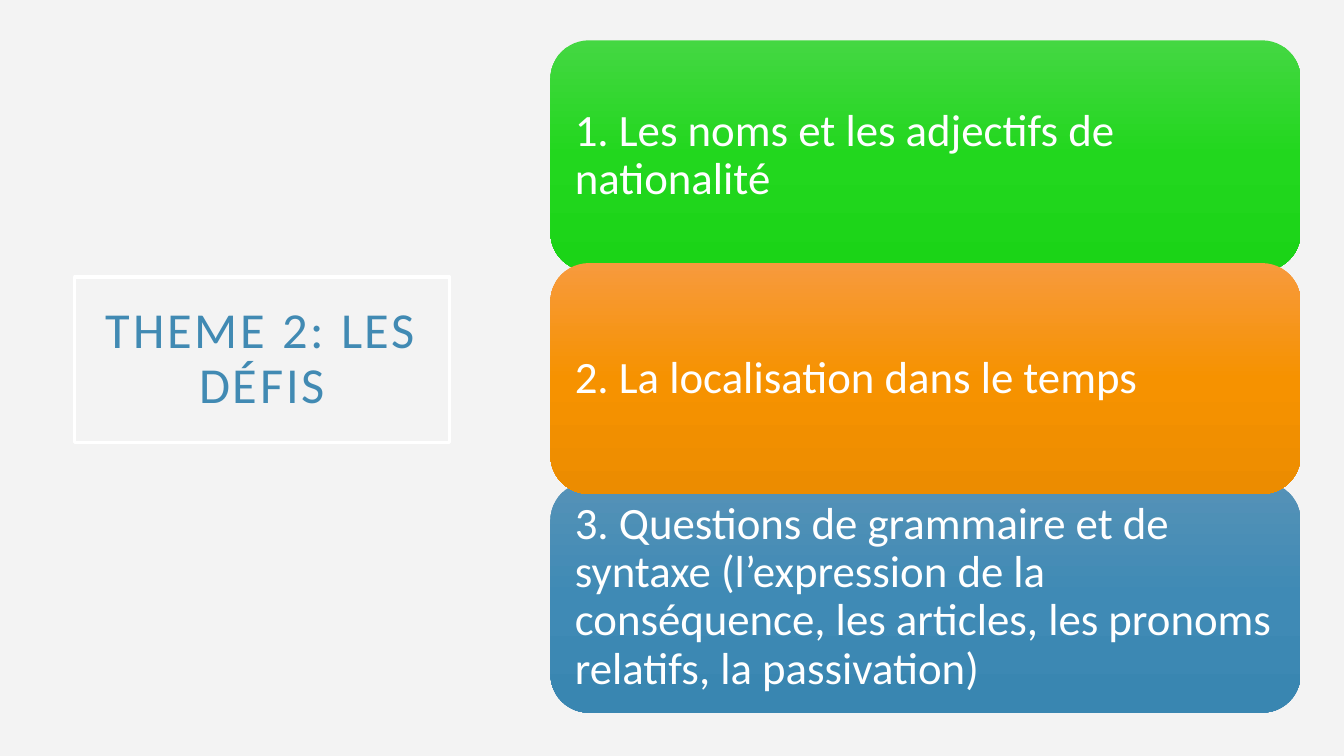
import copy

import pptx
import pptx.dml.color
import pptx.enum.shapes
import pptx.enum.text
import pptx.oxml.ns
import pptx.util

Inches = pptx.util.Inches
Pt = pptx.util.Pt
RGBColor = pptx.dml.color.RGBColor
PP_ALIGN = pptx.enum.text.PP_ALIGN

THEME = {
    "font": "Calibri",
    "title_size": 36,
    "topic_size": 32,
    "background": "F3F3F3",
    "title": "418AB3",
    "white": "FFFFFF",
    "green": ("44D742", "22D71E", "1BD417"),
    "orange": ("F79A3D", "F69200", "EC8C00"),
    "blue": ("5592B7", "3F8AB5", "3986B1"),
}


def write_text(shape, text, size, color, align, inset, spacing=0):
    frame = shape.text_frame
    frame.word_wrap = True
    frame.auto_size = pptx.enum.text.MSO_AUTO_SIZE.NONE
    frame.vertical_anchor = pptx.enum.text.MSO_ANCHOR.MIDDLE
    frame.margin_left = frame.margin_right = Inches(inset)
    frame.margin_top = frame.margin_bottom = Inches(inset)
    paragraph = frame.paragraphs[0]
    paragraph.alignment = align
    paragraph.line_spacing = 0.9
    run = paragraph.add_run()
    run.text = text
    run.font.name = THEME["font"]
    run.font.size = Pt(size)
    run.font.color.rgb = RGBColor.from_string(color)
    if spacing:
        run.font._element.set("spc", str(spacing * 100))


presentation = pptx.Presentation()
presentation.slide_width = Inches(13.33)
presentation.slide_height = Inches(7.5)
slide = presentation.slides.add_slide(presentation.slide_layouts[5])
slide.background.fill.solid()
slide.background.fill.fore_color.rgb = RGBColor.from_string(THEME["background"])

title = slide.shapes.title
title.left, title.top = Inches(0.74), Inches(2.75)
title.width, title.height = Inches(3.72), Inches(1.64)
title.line.color.rgb = RGBColor.from_string(THEME["white"])
title.line.width = Pt(2.5)
write_text(title, "THEME 2: LES DÉFIS", size=THEME["title_size"], color=THEME["title"],
           align=PP_ALIGN.CENTER, inset=0.2, spacing=2)

topics = [
    (4.78, "blue", "3. Questions de grammaire et de syntaxe (l’expression de la "
                   "conséquence, les articles, les pronoms relatifs, la passivation)"),
    (0.4, "green", "1. Les noms et les adjectifs de nationalité"),
    (2.61, "orange", "2. La localisation dans le temps"),
]
for top, palette, text in topics:
    card = slide.shapes.add_shape(
        pptx.enum.shapes.MSO_SHAPE.ROUNDED_RECTANGLE,
        Inches(5.46), Inches(top), Inches(7.44), Inches(2.29))
    card.shadow.inherit = False
    card.line.fill.background()
    card.fill.gradient()
    card.fill.gradient_angle = 270
    stop_list = card._element.spPr.find(".//" + pptx.oxml.ns.qn("a:gsLst"))
    stop_list.append(copy.deepcopy(stop_list[0]))
    for index, stop in enumerate(card.fill.gradient_stops):
        stop.position = index / 2
        stop.color.rgb = RGBColor.from_string(THEME[palette][index])
    write_text(card, text, size=THEME["topic_size"], color=THEME["white"],
               align=PP_ALIGN.LEFT, inset=0.13)

presentation.save("out.pptx")
